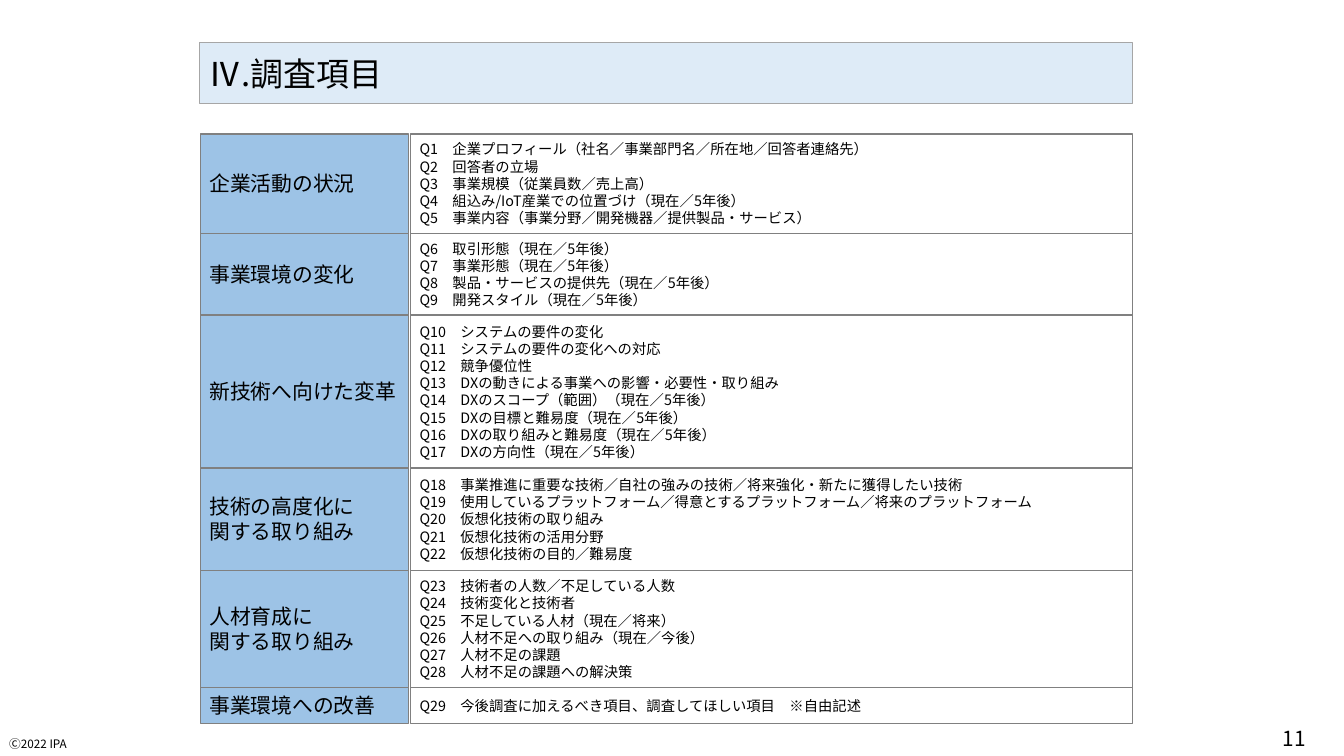
from itertools import count
from typing import NamedTuple

from lxml.etree import SubElement
from pptx import Presentation
from pptx.dml.color import RGBColor
from pptx.enum.shapes import MSO_SHAPE as Shape
from pptx.enum.text import MSO_ANCHOR as Anchor, PP_ALIGN as Align
from pptx.oxml.ns import qn
from pptx.slide import Slide
from pptx.text.text import TextFrame
from pptx.util import Pt

FONT = "Noto Sans CJK JP"
LABEL_LEFT, LABEL_WIDTH = 154, 160
ITEMS_LEFT, ITEMS_WIDTH = 315.4, 555.4
ROWS_TOP = 103


class Area(NamedTuple):
    left: float
    top: float
    width: float
    height: float


class Topic(NamedTuple):
    height: float
    label: list[str]
    questions: list[str]


TOPICS = [
    Topic(76.3, ["企業活動の状況"], [
        "企業プロフィール（社名／事業部門名／所在地／回答者連絡先）",
        "回答者の立場",
        "事業規模（従業員数／売上高）",
        "組込み/IoT産業での位置づけ（現在／5年後）",
        "事業内容（事業分野／開発機器／提供製品・サービス）",
    ]),
    Topic(62.8, ["事業環境の変化"], [
        "取引形態（現在／5年後）",
        "事業形態（現在／5年後）",
        "製品・サービスの提供先（現在／5年後）",
        "開発スタイル（現在／5年後）",
    ]),
    Topic(117.5, ["新技術へ向けた変革"], [
        "システムの要件の変化",
        "システムの要件の変化への対応",
        "競争優位性",
        "DXの動きによる事業への影響・必要性・取り組み",
        "DXのスコープ（範囲）（現在／5年後）",
        "DXの目標と難易度（現在／5年後）",
        "DXの取り組みと難易度（現在／5年後）",
        "DXの方向性（現在／5年後）",
    ]),
    Topic(78.8, ["技術の高度化に", "関する取り組み"], [
        "事業推進に重要な技術／自社の強みの技術／将来強化・新たに獲得したい技術",
        "使用しているプラットフォーム／得意とするプラットフォーム／将来のプラットフォーム",
        "仮想化技術の取り組み",
        "仮想化技術の活用分野",
        "仮想化技術の目的／難易度",
    ]),
    Topic(90, ["人材育成に", "関する取り組み"], [
        "技術者の人数／不足している人数",
        "技術変化と技術者",
        "不足している人材（現在／将来）",
        "人材不足への取り組み（現在／今後）",
        "人材不足の課題",
        "人材不足の課題への解決策",
    ]),
    Topic(27.4, ["事業環境への改善"], [
        "今後調査に加えるべき項目、調査してほしい項目　※自由記述",
    ]),
]


def color(value: str) -> RGBColor:
    return RGBColor.from_string(value)


def write(frame: TextFrame, lines: list[str], size: float, align: Align = Align.LEFT) -> None:
    frame.word_wrap = True
    for index, line in enumerate(lines):
        para = frame.add_paragraph() if index else frame.paragraphs[0]
        para.text = line
        para.alignment = align
        para.line_spacing = Pt(round(size * 1.2, 1))
        para.font.size = Pt(size)
        para.font.name = FONT
        para.font.color.rgb = color("000000")
        defaults = para._p.get_or_add_pPr().find(qn("a:defRPr"))
        SubElement(defaults, qn("a:ea"), typeface=FONT)


def add_panel(page: Slide, area: Area, lines: list[str], size: float, fill: str,
              line: str = "808080", line_width: float = 1) -> None:
    panel = page.shapes.add_shape(Shape.RECTANGLE, *map(Pt, area))
    panel.shadow.inherit = False
    panel.fill.solid()
    panel.fill.fore_color.rgb = color(fill)
    panel.line.color.rgb = color(line)
    panel.line.width = Pt(line_width)
    panel.text_frame.vertical_anchor = Anchor.MIDDLE
    write(panel.text_frame, lines, size)


def add_note(page: Slide, area: Area, words: str, size: float, align: Align = Align.LEFT) -> None:
    box = page.shapes.add_textbox(*map(Pt, area))
    write(box.text_frame, [words], size, align)


def add_topics(page: Slide) -> None:
    numbers = count(1)
    top = ROWS_TOP
    for topic in TOPICS:
        items = [f"Q{next(numbers)}　{question}" for question in topic.questions]
        add_panel(page, Area(ITEMS_LEFT, top, ITEMS_WIDTH, topic.height), items, 11, "FFFFFF")
        add_panel(page, Area(LABEL_LEFT, top, LABEL_WIDTH, topic.height), topic.label, 16, "9DC3E6")
        top += topic.height


def main() -> None:
    deck = Presentation()
    deck.slide_width, deck.slide_height = Pt(1033.2), Pt(581)
    page = deck.slides.add_slide(deck.slide_layouts[6])
    add_note(page, Area(0, 563, 85.7, 18), "Ⓒ2022 IPA", 9)
    add_note(page, Area(958.3, 554.4, 73.4, 26.6), "11", 16, Align.CENTER)
    add_panel(page, Area(153.4, 32.4, 717.1, 47.5), ["Ⅳ.調査項目"], 25.3, "DEEBF7", "A6A6A6", 0.75)
    add_topics(page)
    deck.save("out.pptx")


if __name__ == "__main__":
    main()
